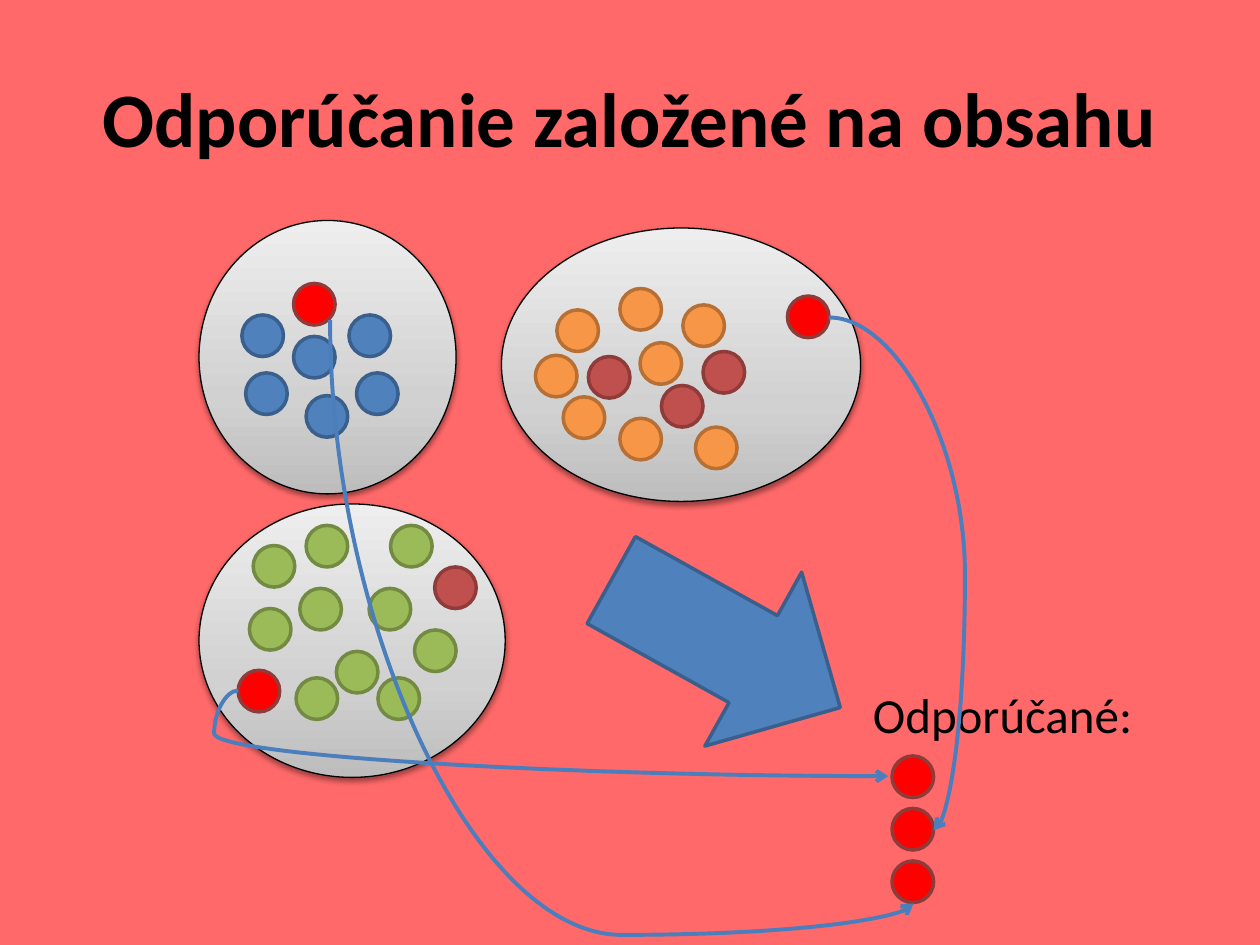
from copy import deepcopy
from typing import NamedTuple

from lxml import etree
from pptx import Presentation
from pptx import util as u
from pptx.dml.color import RGBColor
from pptx.enum import shapes, text
from pptx.oxml.ns import qn

DOT_SIZE = 0.33
CLUSTER_STOPS = ((0, "BDBDBD"), (0.35, "D1D1D1"), (1, "EEEEEE"))


class Box(NamedTuple):
    left: float
    top: float
    width: float
    height: float


class Style(NamedTuple):
    fill: str
    line: str


class Curve(NamedTuple):
    """A curved arrow; its bend is a fraction of the connector's own width."""
    box: Box
    bend: float
    transform: dict[str, str]


BLUE = Style("4F81BD", "3A5F8C")
ORANGE = Style("F79646", "B76F34")
GREEN = Style("9BBB59", "738A42")
BROWN = Style("C0504D", "8E3B39")
RED = Style("FF0000", "8E3B39")

CLUSTERS = (
    Box(3.98, 1.81, 2.85, 2.17),
    Box(1.58, 4, 2.43, 2.17),
    Box(1.58, 1.75, 2.04, 2.17),
)

DOT_GROUPS = (
    (BLUE, ((2.33, 2.67), (1.95, 2.96), (2.43, 3.14), (2.77, 2.5),
            (2.83, 2.96), (1.92, 2.5))),
    (RED, ((2.33, 2.25),)),
    (ORANGE, ((4.42, 2.46), (4.25, 2.82), (5.08, 2.72), (5.52, 3.39),
              (4.92, 2.29), (4.47, 3.15), (4.92, 3.32), (5.42, 2.42))),
    (BROWN, ((5.25, 3.06), (5.58, 2.79), (4.67, 2.83))),
    (RED, ((6.25, 2.35),)),
    (GREEN, ((2.38, 4.67), (2.93, 4.67), (3.1, 4.17), (2.43, 4.17),
             (2.67, 5.17), (2.01, 4.33), (1.98, 4.83), (3, 5.38),
             (2.35, 5.38), (3.29, 5))),
    (BROWN, ((3.45, 4.5),)),
    (RED, ((1.89, 5.32),)),
)
RECOMMENDED = tuple((7.08, 6 + 5 / 12 * row) for row in range(3))

CURVES = (
    Curve(Box(1.89, 5.48, 5.16, 0.68), -0.037,
          {"rot": "10800000", "flipH": "1", "flipV": "1"}),
    Curve(Box(6.58, 2.52, 0.83, 4.07), 1.3, {}),
    Curve(Box(2.62, 2.54, 4.63, 4.63), 1.054,
          {"rot": "16200000", "flipH": "1"}),
)


def color(value: str) -> RGBColor:
    return RGBColor.from_string(value)


def add_preset(slide, preset, box: Box, style: Style):
    """Add a shape with a solid fill and a 2 pt outline, without shadow."""
    shape = slide.shapes.add_shape(preset, *map(u.Inches, box))
    shape.shadow.inherit = False
    shape.fill.solid()
    shape.fill.fore_color.rgb = color(style.fill)
    shape.line.color.rgb = color(style.line)
    shape.line.width = u.Pt(2)
    return shape


def add_cluster(slide, box: Box) -> None:
    """Add a grey gradient ellipse with a soft shadow below it."""
    shape = add_preset(slide, shapes.MSO_SHAPE.OVAL, box, Style("D1D1D1", "000000"))
    shape.line.width = u.Pt(0.75)
    shape.fill.gradient()
    shape.fill.gradient_angle = 90
    properties = shape._element.spPr
    stop_list = properties.find(".//" + qn("a:gsLst"))
    stop_list.append(deepcopy(stop_list[0]))
    for stop, (position, value) in zip(shape.fill.gradient_stops, CLUSTER_STOPS):
        stop.position = position
        stop.color.rgb = color(value)

    shadow = etree.SubElement(
        properties.find(qn("a:effectLst")), qn("a:outerShdw"),
        blurRad=str(u.Pt(3.1)), dist=str(u.Pt(1.6)), dir="5400000", rotWithShape="0")
    shade = etree.SubElement(shadow, qn("a:srgbClr"), val="000000")
    etree.SubElement(shade, qn("a:alpha"), val="38000")


def add_dots(slide, style: Style, places) -> None:
    for left, top in places:
        add_preset(slide, shapes.MSO_SHAPE.OVAL,
                   Box(left, top, DOT_SIZE, DOT_SIZE), style)


def add_text(slide, box: Box, words: str, anchor, alignment, font: dict) -> None:
    frame = slide.shapes.add_textbox(*map(u.Inches, box)).text_frame
    frame.word_wrap = True
    frame.vertical_anchor = anchor
    paragraph = frame.paragraphs[0]
    paragraph.alignment = alignment
    run = paragraph.add_run()
    run.text = words
    run.font.color.rgb = color("000000")
    for name, value in font.items():
        setattr(run.font, name, value)


def add_curve(slide, curve: Curve) -> None:
    left, top, width, height = curve.box
    connector = slide.shapes.add_connector(
        shapes.MSO_CONNECTOR.CURVE,
        *map(u.Inches, (left, top, left + width, top + height)))
    connector.line.color.rgb = color("4B7EBC")
    connector.line.width = u.Pt(2.25)
    properties = connector._element.spPr
    for name, value in curve.transform.items():
        properties.find(qn("a:xfrm")).set(name, value)
    geometry = properties.find(qn("a:prstGeom"))
    adjustments = geometry.find(qn("a:avLst"))
    if adjustments is None:
        adjustments = etree.SubElement(geometry, qn("a:avLst"))
    etree.SubElement(adjustments, qn("a:gd"), name="adj1",
                     fmla=f"val {round(curve.bend * 100000)}")
    etree.SubElement(properties.find(qn("a:ln")), qn("a:tailEnd"), type="arrow")
    etree.SubElement(properties, qn("a:effectLst"))


def main() -> None:
    presentation = Presentation()
    presentation.slide_width = u.Inches(10)
    presentation.slide_height = u.Inches(7.5)
    slide = presentation.slides.add_slide(presentation.slide_layouts[6])
    slide.background.fill.solid()
    slide.background.fill.fore_color.rgb = color("FF6969")

    for box in CLUSTERS:
        add_cluster(slide, box)
    add_text(slide, Box(0.5, 0.3, 9, 1.25), "Odporúčanie založené na obsahu",
             text.MSO_ANCHOR.MIDDLE, text.PP_ALIGN.CENTER,
             {"name": "Calibri", "size": u.Pt(44), "bold": True})
    add_text(slide, Box(6.83, 5.38, 2.67, 1.79), "Odporúčané:",
             text.MSO_ANCHOR.TOP, text.PP_ALIGN.LEFT,
             {"name": "Calibri", "size": u.Pt(28)})

    for style, places in DOT_GROUPS:
        add_dots(slide, style, places)
    arrow = add_preset(slide, shapes.MSO_SHAPE.RIGHT_ARROW,
                       Box(4.72, 4.32, 2.08, 1.58), BLUE)
    arrow.rotation = 29.1
    add_dots(slide, RED, RECOMMENDED)
    for curve in CURVES:
        add_curve(slide, curve)

    presentation.save("out.pptx")


if __name__ == "__main__":
    main()
